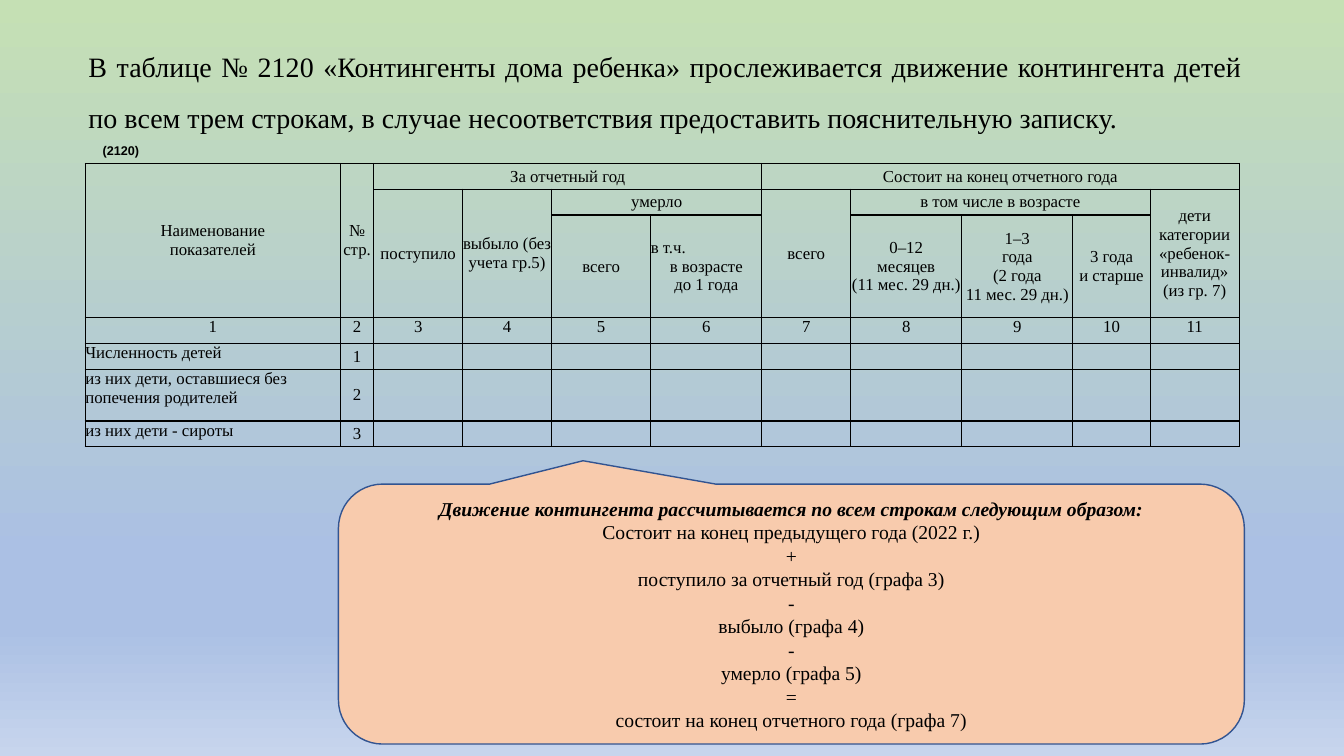
"""Build the slide on table 2120 with the formula for the movement of children."""
from lxml.etree import SubElement
from pptx import Presentation
from pptx.dml.color import RGBColor
from pptx.enum.shapes import MSO_SHAPE
from pptx.enum.text import MSO_ANCHOR as Anchor, PP_ALIGN as Align
from pptx.oxml.ns import qn
from pptx.util import Cm, Pt

COLORS = {"text": "000000", "callout": "F8CBAD", "outline": "325491"}
BACKGROUND = [(0, "C5E0B4"), (74, "ABC0E4"), (83, "ABC0E4"), (100, "C7D5ED")]
SERIF = "Times New Roman"
NO_STYLE = "{2D5ABB26-0587-4C30-8999-92F81FD0307C}"

TITLE = ("В таблице № 2120 «Контингенты дома ребенка» прослеживается движение "
         "контингента детей по всем трем строкам, в случае несоответствия "
         "предоставить пояснительную записку.")
TABLE_CODE = "(2120)"
COLUMN_WIDTHS = [6.43, 0.84, 2.24, 2.24, 2.5, 2.8, 2.24, 2.8, 2.8, 1.95, 2.24]
ROW_HEIGHTS = [0.65, 0.65, 2.59, 0.65, 0.65, 1.3, 0.65]
HEADERS = [
    (0, 0, 3, 1, ["Наименование", "показателей"]),
    (0, 1, 3, 1, ["№", "стр."]),
    (0, 2, 1, 4, ["За отчетный год"]),
    (0, 6, 1, 5, ["Состоит на конец отчетного года"]),
    (1, 2, 2, 1, ["поступило"]),
    (1, 3, 2, 1, ["выбыло (без учета гр.5)"]),
    (1, 4, 1, 2, ["умерло"]),
    (1, 6, 2, 1, ["всего"]),
    (1, 7, 1, 3, ["в том числе в возрасте"]),
    (1, 10, 2, 1, ["дети категории «ребенок-инвалид»", "(из гр. 7)"]),
    (2, 4, 1, 1, ["всего"]),
    (2, 5, 1, 1, ["в т.ч.", "в возрасте", "до 1 года"]),
    (2, 7, 1, 1, ["0–12", "месяцев", "(11 мес. 29 дн.)"]),
    (2, 8, 1, 1, ["1–3", "года", "(2 года", "11 мес. 29 дн.)"]),
    (2, 9, 1, 1, ["3 года", "и старше"]),
]
NUMBER_ROW = 3
INDICATORS = ["Численность детей", "из них дети, оставшиеся без попечения родителей",
              "из них дети - сироты"]
FORMULA_HEADING = "Движение контингента рассчитывается по всем строкам следующим образом:"
FORMULA = ["Состоит на конец предыдущего года (2022 г.)", "+",
           "поступило за отчетный год (графа 3)", "-", "выбыло (графа 4)", "-",
           "умерло (графа 5)", "=", "состоит на конец отчетного года (графа 7)"]


def write(frame, lines, size, align=Align.CENTER, font=SERIF, bold=False):
    frame.word_wrap = True
    for index, line in enumerate(lines):
        para = frame.add_paragraph() if index else frame.paragraphs[0]
        para.alignment = align
        span = para.add_run()
        span.text = line
        span.font.size, span.font.name, span.font.bold = Pt(size), font, bold
        span.font.color.rgb = RGBColor.from_string(COLORS["text"])
    return frame.paragraphs


def paint_background(page):
    fill = page.background.fill
    fill.gradient()
    fill.gradient_angle = 270
    stops = next(page.element.iter(qn("a:gsLst")))
    for stop in list(stops):
        stops.remove(stop)
    for position, color in BACKGROUND:
        stop = SubElement(stops, qn("a:gs"), pos=str(position * 1000))
        SubElement(stop, qn("a:srgbClr"), val=color)


def format_cell(cell):
    cell.margin_left = cell.margin_right = cell.margin_top = cell.margin_bottom = 0
    properties = cell._tc.get_or_add_tcPr()
    for side in ("a:lnL", "a:lnR", "a:lnT", "a:lnB"):
        border = SubElement(properties, qn(side), w=str(Pt(1)))
        SubElement(SubElement(border, qn("a:solidFill")), qn("a:srgbClr"), val=COLORS["text"])
    cell.fill.background()
    if not cell.text_frame.text:
        SubElement(cell.text_frame.paragraphs[0]._p, qn("a:endParaRPr"), sz="1200")


def add_contingent_table(page):
    frame = page.shapes.add_table(len(ROW_HEIGHTS), len(COLUMN_WIDTHS), Cm(2.15), Cm(4.12),
                                  Cm(sum(COLUMN_WIDTHS)), Cm(sum(ROW_HEIGHTS)))
    table = frame.table
    table.first_row = table.horz_banding = False
    next(table._tbl.iter(qn("a:tableStyleId"))).text = NO_STYLE
    for column, width in zip(table.columns, COLUMN_WIDTHS):
        column.width = Cm(width)
    for row, height in zip(table.rows, ROW_HEIGHTS):
        row.height = Cm(height)

    for row, column, height, width, lines in HEADERS:
        cell = table.cell(row, column)
        if height * width > 1:
            cell.merge(table.cell(row + height - 1, column + width - 1))
        cell.vertical_anchor = Anchor.MIDDLE
        paras = write(cell.text_frame, lines, 12)
        if lines[0] == "в т.ч.":
            paras[0].alignment = Align.LEFT
    for column in range(len(COLUMN_WIDTHS)):
        write(table.cell(NUMBER_ROW, column).text_frame, [str(column + 1)], 12)
    for number, indicator in enumerate(INDICATORS, 1):
        row = NUMBER_ROW + number
        write(table.cell(row, 0).text_frame, [indicator], 12, Align.LEFT)
        table.cell(row, 1).vertical_anchor = Anchor.MIDDLE
        write(table.cell(row, 1).text_frame, [str(number)], 12)
    for cell in table.iter_cells():
        format_cell(cell)


def add_formula_callout(page):
    callout = page.shapes.add_shape(MSO_SHAPE.ROUNDED_RECTANGULAR_CALLOUT,
                                    Cm(8.53), Cm(12.2), Cm(22.83), Cm(6.55))
    callout.shadow.inherit = False
    for index, value in enumerate((-0.23, -0.59, 0.17)):
        callout.adjustments[index] = value
    callout.fill.solid()
    callout.fill.fore_color.rgb = RGBColor.from_string(COLORS["callout"])
    callout.line.color.rgb = RGBColor.from_string(COLORS["outline"])
    callout.line.width = Pt(1)
    callout.text_frame.vertical_anchor = Anchor.MIDDLE
    heading = write(callout.text_frame, [FORMULA_HEADING, *FORMULA], 14)[0].runs[0]
    heading.font.bold = heading.font.italic = True


def main():
    deck = Presentation()
    deck.slide_width, deck.slide_height = Cm(33.87), Cm(19.05)
    page = deck.slides.add_slide(deck.slide_layouts[6])
    paint_background(page)

    title_box = page.shapes.add_textbox(Cm(1.98), Cm(0.71), Cm(29.57), Cm(18.03))
    title = write(title_box.text_frame, [TITLE], 20, Align.JUSTIFY)[0]
    title.line_spacing, title.space_before = 1.5, Pt(10)

    add_contingent_table(page)

    code_box = page.shapes.add_textbox(Cm(2.34), Cm(3.48), Cm(28.84), Cm(0.64))
    code_box.text_frame.vertical_anchor = Anchor.MIDDLE
    write(code_box.text_frame, [TABLE_CODE], 9, Align.LEFT, "Arial", True)

    add_formula_callout(page)
    deck.save("out.pptx")


if __name__ == "__main__":
    main()
